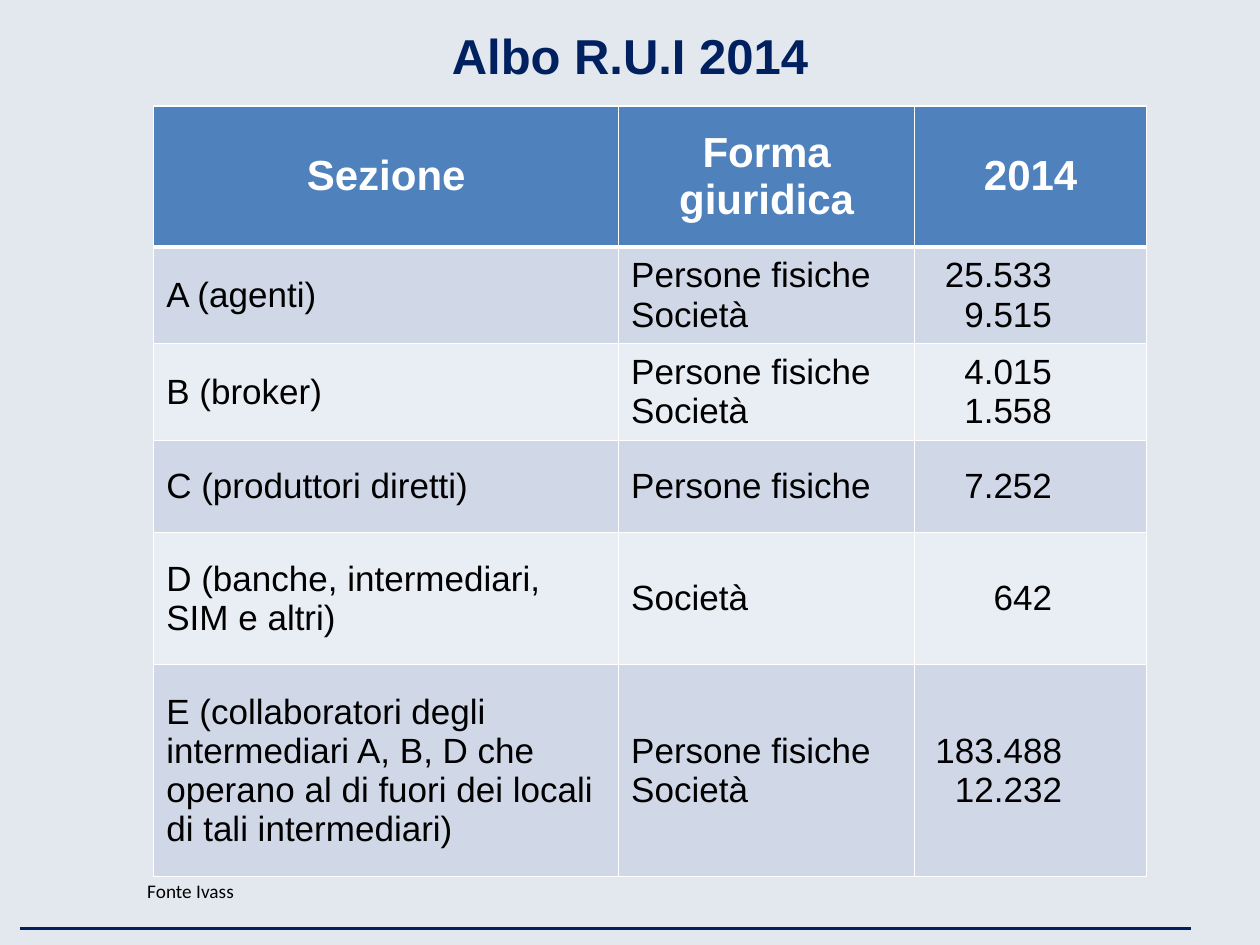
import pptx
import pptx.dml.color
import pptx.enum.shapes
import pptx.enum.text
import pptx.oxml
import pptx.oxml.ns
import pptx.util

IN = pptx.util.Inches
ALIGN = pptx.enum.text.PP_ALIGN
MIDDLE = pptx.enum.text.MSO_ANCHOR.MIDDLE
NAVY, WHITE, BLACK = "002060", "FFFFFF", "000000"
HEADER_FILL, BANDS = "4F81BD", ("D0D8E8", "E9EDF4")

COLUMNS = (3.69, 2.35, 1.84)
ROWS = (1.12, 0.74, 0.74, 0.73, 1.05, 1.68)
PEOPLE, FIRMS = "Persone fisiche", "Società"
HEADINGS = ("Sezione", "Forma giuridica", "2014")
SECTIONS = (
    ("A (agenti)", (PEOPLE, FIRMS), ("25.533", "9.515")),
    ("B (broker)", (PEOPLE, FIRMS), ("4.015", "1.558")),
    ("C (produttori diretti)", (PEOPLE,), ("7.252",)),
    ("D (banche, intermediari, SIM e altri)", (FIRMS,), ("642",)),
    ("E (collaboratori degli intermediari A, B, D che operano al di fuori "
     "dei locali di tali intermediari)", (PEOPLE, FIRMS), ("183.488", "12.232")),
)


def rgb(value):
    return pptx.dml.color.RGBColor.from_string(value)


def write(tf, lines, size, color, align=ALIGN.LEFT, bold=False, font="Arial"):
    tf.text = "\n".join(lines)
    tf.word_wrap = True
    for p in tf.paragraphs:
        p.alignment = align
        for r in p.runs:
            r.font.name, r.font.size, r.font.bold = font, pptx.util.Pt(size), bold
            r.font.color.rgb = rgb(color)


def set_borders(cell, **widths):
    """Draw white borders, 1 pt unless a side (L, R, T, B) is given."""
    tc_pr = cell._tc.get_or_add_tcPr()
    for i, side in enumerate("LRTB"):
        width = pptx.util.Pt(widths.get(side, 1))
        tc_pr.insert(i, pptx.oxml.parse_xml(
            f'<a:ln{side} {pptx.oxml.ns.nsdecls("a")} w="{width}"><a:solidFill>'
            f'<a:srgbClr val="{WHITE}"/></a:solidFill></a:ln{side}>'))


def style_cell(cell, fill, **widths):
    cell.vertical_anchor = MIDDLE
    cell.fill.solid()
    cell.fill.fore_color.rgb = rgb(fill)
    set_borders(cell, **widths)


def add_title(s, box):
    tf = s.shapes.add_textbox(*map(IN, box)).text_frame
    write(tf, ["Albo R.U.I 2014"], 28, NAVY, ALIGN.CENTER, bold=True)
    tf.vertical_anchor = MIDDLE


def add_register(s, left, top):
    box = (left, top, sum(COLUMNS), sum(ROWS))
    table = s.shapes.add_table(len(ROWS), len(COLUMNS), *map(IN, box)).table
    for column, width in zip(table.columns, COLUMNS):
        column.width = IN(width)
    for row, height in zip(table.rows, ROWS):
        row.height = IN(height)

    for c, heading in enumerate(HEADINGS):
        cell = table.cell(0, c)
        write(cell.text_frame, [heading], 24, WHITE, ALIGN.CENTER, bold=True)
        style_cell(cell, HEADER_FILL, B=3)

    for i, (section, forms, counts) in enumerate(SECTIONS):
        for c, lines in enumerate(([section], forms, counts)):
            cell = table.cell(i + 1, c)
            write(cell.text_frame, lines, 20, BLACK,
                  ALIGN.RIGHT if lines is counts else ALIGN.LEFT)
            style_cell(cell, BANDS[i % 2], T=1 if i else 3)
        wide = len(counts[0]) > 6
        table.cell(i + 1, 2).margin_right = IN(0.67 if wide else 0.75)


def add_source(s, box):
    tf = s.shapes.add_textbox(*map(IN, box)).text_frame
    write(tf, ["Fonte Ivass"], 11, BLACK, font="Calibri")


def add_footer_rule(s, left, right, y):
    line = s.shapes.add_connector(pptx.enum.shapes.MSO_CONNECTOR.STRAIGHT,
                                  *map(IN, (left, y, right, y)))
    line.line.color.rgb = rgb(NAVY)
    line.line.width = pptx.util.Pt(2)
    line._element.spPr.append(pptx.oxml.parse_xml(
        f'<a:effectLst {pptx.oxml.ns.nsdecls("a")}/>'))


def main():
    prs = pptx.Presentation()
    prs.slide_width, prs.slide_height = IN(10), IN(7.5)
    s = prs.slides.add_slide(prs.slide_layouts[6])
    s.background.fill.solid()
    s.background.fill.fore_color.rgb = rgb("E3E8EF")
    add_footer_rule(s, 0.16, 9.45, 7.37)
    add_title(s, (0.5, 0.05, 9, 0.77))
    add_register(s, 1.22, 0.84)
    add_source(s, (1.07, 6.93, 8.58, 0.29))
    prs.save("out.pptx")


if __name__ == "__main__":
    main()
